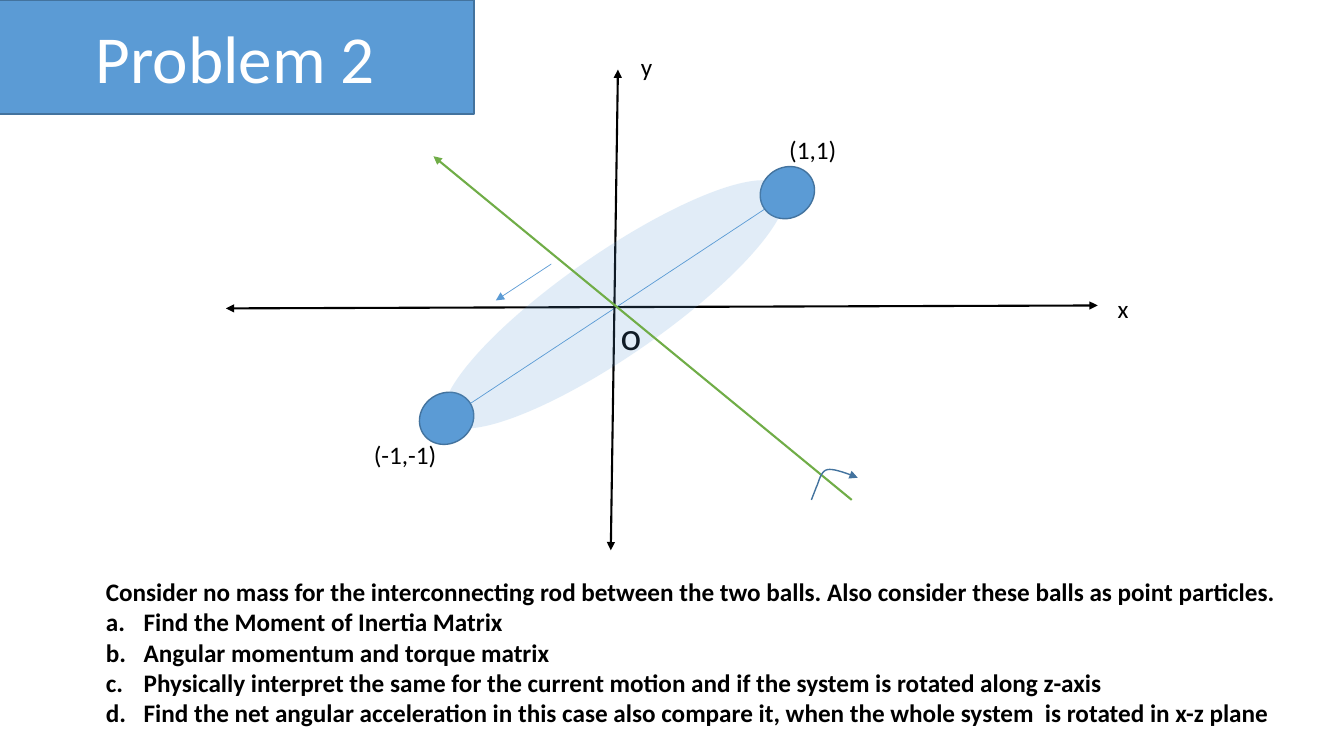
from pptx import Presentation
from pptx.dml.color import RGBColor
from pptx.enum.shapes import MSO_CONNECTOR, MSO_SHAPE
from pptx.enum.text import MSO_ANCHOR, MSO_AUTO_SIZE, PP_ALIGN
from pptx.oxml.ns import qn
from pptx.util import Pt
from lxml.etree import SubElement

BLUE, EDGE, GREEN, BLACK, WHITE = "5B9BD5", "43739E", "70AD47", "000000", "FFFFFF"
TASKS = [
    "Find the Moment of Inertia Matrix",
    "Angular momentum and torque matrix",
    "Physically interpret the same for the current motion and if the system is rotated along z-axis",
    "Find the net angular acceleration in this case also compare it, when the whole system  is rotated in x-z plane",
]


def tint(code):
    return RGBColor.from_string(code)


def write(par, text, size=18, color=BLACK, bold=False, align=PP_ALIGN.LEFT):
    par.alignment = align
    par.line_spacing = 1.0
    par.space_before = par.space_after = Pt(0)
    run = par.add_run()
    run.text = text
    font = run.font
    font.name, font.size, font.bold = "Calibri", Pt(size), bold
    font.color.rgb = tint(color)


def place(shape, left, top, width, height):
    shape.left, shape.top = Pt(left), Pt(top)
    shape.width, shape.height = Pt(width), Pt(height)


def stroke(shape, color, width, ends=()):
    shape.line.color.rgb = tint(color)
    shape.line.width = Pt(width)
    edge = shape._element.spPr.find(qn("a:ln"))
    for end in ends:
        SubElement(edge, qn(f"a:{end}End"), type="triangle")


def link(shapes, start, stop, color, width, ends=()):
    line = shapes.add_connector(MSO_CONNECTOR.STRAIGHT, *map(Pt, start + stop))
    stroke(line, color, width, ends)
    SubElement(line._element.spPr, qn("a:effectLst"))


def oval(shapes, mid, width, height, turn):
    x, y = mid
    shape = shapes.add_shape(
        MSO_SHAPE.OVAL, Pt(x - width / 2), Pt(y - height / 2), Pt(width), Pt(height))
    shape.rotation = turn
    shape.shadow.inherit = False
    shape.fill.solid()
    shape.fill.fore_color.rgb = tint(BLUE)
    return shape


def label(shapes, spot, width, height, text, size=18):
    box = shapes.add_textbox(*map(Pt, spot + (width, height)))
    box.text_frame.word_wrap = False
    write(box.text_frame.paragraphs[0], text, size=size)


def bend(a, b, c, d, steps=12):
    for step in range(1, steps + 1):
        t = step / steps
        s = 1 - t
        yield tuple(
            s**3 * p + 3 * s * s * t * q + 3 * s * t * t * r + t**3 * u
            for p, q, r, u in zip(a, b, c, d))


def banner(slide, left, top, width, height):
    title = slide.shapes.title
    place(title, left, top, width, height)
    title.fill.solid()
    title.fill.fore_color.rgb = tint(BLUE)
    stroke(title, EDGE, 1)
    frame = title.text_frame
    frame.auto_size = MSO_AUTO_SIZE.NONE
    frame.vertical_anchor = MSO_ANCHOR.MIDDLE
    write(frame.paragraphs[0], "Problem 2", size=48, color=WHITE, align=PP_ALIGN.CENTER)


def tasks(slide, left, top, width, height):
    body = slide.placeholders[1]
    place(body, left, top, width, height)
    frame = body.text_frame
    frame.word_wrap = False
    frame.auto_size = MSO_AUTO_SIZE.NONE
    frame.vertical_anchor = MSO_ANCHOR.TOP
    lead = frame.paragraphs[0]
    write(lead, "Consider no mass for the interconnecting rod between the two balls. "
          "Also consider these balls as point particles.", bold=True)
    props = lead._p.get_or_add_pPr()
    props.set("marL", "0")
    props.set("indent", "0")
    SubElement(props, qn("a:buNone"))
    for task in TASKS:
        par = frame.add_paragraph()
        write(par, task, bold=True)
        props = par._p.get_or_add_pPr()
        props.set("marL", str(Pt(27)))
        props.set("indent", str(Pt(-27)))
        SubElement(props, qn("a:buFont"), typeface="+mj-lt")
        SubElement(props, qn("a:buAutoNum"), type="alphaLcPeriod")


def diagram(slide, left, top, width, height):
    shapes = slide.shapes
    both = ("head", "tail")

    def at(x, y):
        return left + width / 2 + x, top + height / 2 + y

    pair = shapes.add_group_shape().shapes
    link(pair, at(-110.9, 74.1), at(107.2, -69.9), BLUE, 0.5)
    for side in (-1, 1):
        ball = oval(pair, at(121.7 * side, -80.6 * side), 40, 36, 326.2)
        stroke(ball, EDGE, 1)

    link(shapes, at(-4.4, 174.9), at(0.7, -168.5), BLACK, 1.5, both)
    link(shapes, at(-279.4, 2.1), at(343.4, 0), BLACK, 1.5, both)
    label(shapes, at(10, -185.1), 23, 29, "y")
    label(shapes, at(350.6, -12.3), 22, 29, "x")
    label(shapes, at(-4.4, 0.7), 30, 41, "o", size=28)
    label(shapes, at(115.9, -126), 49, 29, "(1,1)")
    label(shapes, at(-180.8, 92.1), 60, 29, "(-1,-1)")

    spin = shapes.add_group_shape().shapes
    haze = oval(spin, at(-1.9, -0.8), 293, 73.4, 325.3)
    haze.line.fill.background()
    shade = haze._element.spPr.find(qn("a:solidFill"))
    SubElement(shade[0], qn("a:alpha"), val="18000")
    link(spin, at(-46.9, -29.6), at(-86.5, -3.6), BLUE, 0.5, ["tail"])
    link(shapes, at(167.7, 138.9), at(-131.1, -106.6), GREEN, 1.5, ["tail"])

    base, crest, tip = at(142.5, 129.6), at(150.4, 117.3), at(172, 123.1)
    dots = [base]
    dots += bend(base, at(143.9, 127.4), at(145.4, 118), crest)
    dots += bend(crest, at(155.5, 115.9), tip, tip)
    pen = shapes.build_freeform(*map(Pt, at(138.9, 138.9)))
    pen.add_line_segments([(Pt(x), Pt(y)) for x, y in dots], close=False)
    curl = pen.convert_to_shape()
    curl.fill.background()
    curl.shadow.inherit = False
    stroke(curl, EDGE, 1, ["tail"])


def main():
    deck = Presentation()
    deck.slide_width, deck.slide_height = Pt(960), Pt(540)
    slide = deck.slides.add_slide(deck.slide_layouts[1])
    banner(slide, -2, 0, 340.5, 81.4)
    diagram(slide, 161, 33, 559.4, 370.4)
    tasks(slide, 68.4, 408.2, 860.4, 138)
    deck.save("out.pptx")


if __name__ == "__main__":
    main()
